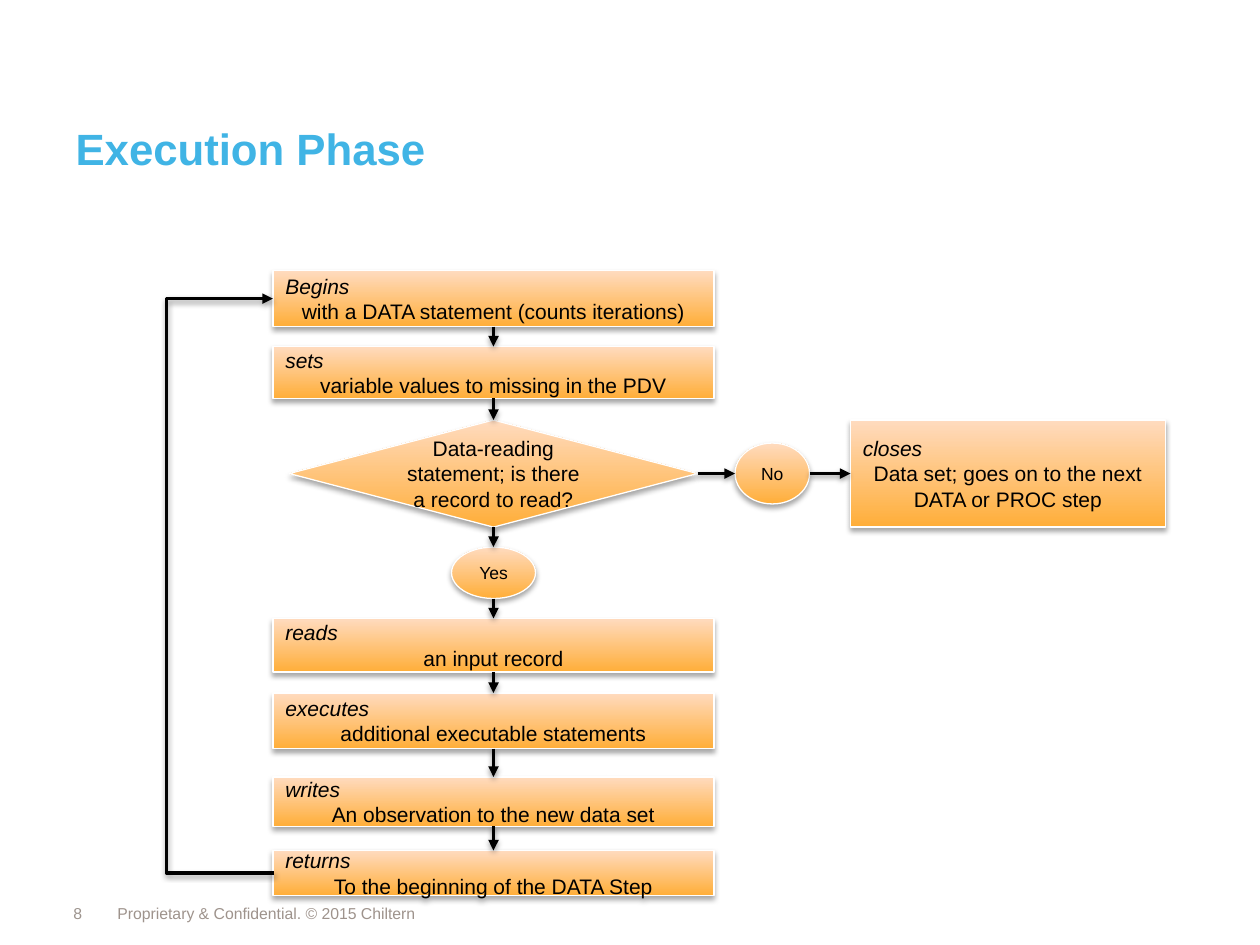
from pptx import Presentation
from pptx.dml.color import RGBColor
from pptx.enum.shapes import MSO_CONNECTOR, MSO_SHAPE
from pptx.enum.text import MSO_ANCHOR, MSO_AUTO_SIZE, PP_ALIGN
from pptx.oxml.ns import qn
from pptx.util import Inches, Pt
from lxml import etree

RECT, DIAMOND, OVAL = MSO_SHAPE.RECTANGLE, MSO_SHAPE.DIAMOND, MSO_SHAPE.OVAL
STRAIGHT, ELBOW = MSO_CONNECTOR.STRAIGHT, MSO_CONNECTOR.ELBOW
LEFT, CENTER, RIGHT = PP_ALIGN.LEFT, PP_ALIGN.CENTER, PP_ALIGN.RIGHT
TOP, MIDDLE = MSO_ANCHOR.TOP, MSO_ANCHOR.MIDDLE
SITE_TOP, SITE_LEFT, SITE_BOTTOM, SITE_RIGHT = range(4)

FONT = "Arial"
COLORS = {"title": "40B4E5", "number": "9D948E", "footer": "9E938C",
          "dark": "FFAE39", "light": "FFDBBF", "edge": "FFFFFF",
          "ink": "000000"}

prs = Presentation()
prs.slide_width, prs.slide_height = Inches(10), Inches(7.5)
CELL = prs.slide_width / 120  # grid of 120 columns by 90 rows

# Flow column: kind, top row in the column, rows high, text
STEPS = [
    (RECT, 0, 5.3, ("Begins", "with a DATA statement (counts iterations)")),
    (RECT, 7.2, 4.95, ("sets", "variable values to missing in the PDV")),
    (DIAMOND, 14.2, 10.2, "Data-reading statement; is there a record to read?"),
    (OVAL, 26.3, 4.9, "Yes"),
    (RECT, 33.1, 5.1, ("reads", "an input record")),
    (RECT, 40.2, 5.3, ("executes", "additional executable statements")),
    (RECT, 48.2, 4.7, ("writes", "An observation to the new data set")),
    (RECT, 55.2, 4.3, ("returns", "To the beginning of the DATA Step")),
]
STEP_WIDTHS = {RECT: 42, DIAMOND: 38.9, OVAL: 8}


def grid(*cells):
    return [round(c * CELL) for c in cells]


def rgb(name):
    return RGBColor.from_string(COLORS[name])


def add_run(p, text, size, color, bold=False, italic=False):
    r = p.add_run()
    r.text = text
    f = r.font
    f.name, f.size, f.bold, f.italic = FONT, Pt(size), bold, italic
    f.color.rgb = rgb(color)


def add_shadow(s, alpha, distance):
    sp_pr = s._element.spPr
    effects = etree.SubElement(sp_pr, qn("a:effectLst"))
    shadow = etree.SubElement(effects, qn("a:outerShdw"), blurRad=str(Pt(3.1)),
                              dist=str(Pt(distance)), dir="5400000",
                              rotWithShape="0")
    color = etree.SubElement(shadow, qn("a:srgbClr"), val=COLORS["ink"])
    etree.SubElement(color, qn("a:alpha"), val=str(alpha * 1000))


def add_node(slide, kind, box, text):
    """A flow shape; a (verb, detail) pair puts the verb on its own line."""
    s = slide.shapes.add_shape(kind, *grid(*box))
    s.fill.gradient()
    s.fill.gradient_angle = 90
    for stop, name in zip(s.fill.gradient_stops, ("dark", "light")):
        stop.color.rgb = rgb(name)
    s.line.color.rgb = rgb("edge")
    s.line.width = Pt(0.75)
    add_shadow(s, 35, 1.8)
    tf = s.text_frame
    tf.word_wrap = kind != OVAL
    tf.vertical_anchor = MIDDLE
    p = tf.paragraphs[0]
    if isinstance(text, tuple):
        verb, text = text
        p.alignment = LEFT
        add_run(p, verb, 12, "ink", italic=True)
        p = tf.add_paragraph()
    p.alignment = CENTER
    add_run(p, text, 10 if kind == OVAL else 12, "ink")
    return s


def style_arrow(c):
    c.line.color.rgb = rgb("ink")
    c.line.width = Pt(2)
    etree.SubElement(c.line._get_or_add_ln(), qn("a:tailEnd"), type="triangle")
    add_shadow(c, 38, 1.6)


def side_point(s, site):
    x = {SITE_LEFT: 0, SITE_RIGHT: s.width}.get(site, s.width // 2)
    y = {SITE_TOP: 0, SITE_BOTTOM: s.height}.get(site, s.height // 2)
    return s.left + x, s.top + y


def link(slide, start, start_site, end, end_site):
    """Arrow between two sides; ovals number their sites differently."""
    c = slide.shapes.add_connector(STRAIGHT, *side_point(start, start_site),
                                   *side_point(end, end_site))
    if start.auto_shape_type != OVAL:
        c.begin_connect(start, start_site)
    if end.auto_shape_type != OVAL:
        c.end_connect(end, end_site)
    style_arrow(c)


def flow_column(slide, box):
    left, top, width, _ = box
    nodes = []
    for kind, row, rows, text in STEPS:
        w = STEP_WIDTHS[kind]
        nodes.append(add_node(
            slide, kind, (left + (width - w) / 2, top + row, w, rows), text))
    for upper, lower in zip(nodes, nodes[1:]):
        link(slide, upper, SITE_BOTTOM, lower, SITE_TOP)
    return nodes


def no_branch(slide, box, decision):
    left, top, width, height = box
    no = add_node(slide, OVAL, (left, top + (height - 5.8) / 2, 7.1, 5.8), "No")
    closes = add_node(slide, RECT, (left + 11, top, width - 11, height),
                      ("closes", "Data set; goes on to the next DATA or PROC step"))
    link(slide, decision, SITE_RIGHT, no, SITE_LEFT)
    link(slide, no, SITE_RIGHT, closes, SITE_LEFT)


def return_loop(slide, first, last, column):
    """Elbow from the last step back to the first, turning at a grid column."""
    overlap = Inches(0.01)
    x1, y1 = side_point(last, SITE_LEFT)
    x1 += overlap
    c = slide.shapes.add_connector(ELBOW, x1, y1, *side_point(first, SITE_LEFT))
    bend = round((x1 - column * CELL) / overlap * 100000)
    guides = c._element.spPr.find(qn("a:prstGeom")).get_or_add_avLst()
    etree.SubElement(guides, qn("a:gd"), name="adj1", fmla=f"val {bend}")
    style_arrow(c)


def title(slide, box, text):
    s = slide.shapes.title
    s.left, s.top, s.width, s.height = grid(*box)
    tf = s.text_frame
    tf.auto_size, tf.vertical_anchor = MSO_AUTO_SIZE.NONE, TOP
    p = tf.paragraphs[0]
    p.alignment = LEFT
    add_run(p, text, 25, "title", bold=True)


def footer(slide, box):
    left, top, width, height = box
    parts = [(0, 5, "8", "number", RIGHT),
             (6, width - 6, "Proprietary & Confidential. © 2015 Chiltern",
              "footer", LEFT)]
    for column, columns, text, color, align in parts:
        s = slide.shapes.add_textbox(*grid(left + column, top, columns, height))
        tf = s.text_frame
        tf.word_wrap, tf.vertical_anchor = True, MIDDLE
        p = tf.paragraphs[0]
        p.alignment = align
        add_run(p, text, 9, color)


def main():
    slide = prs.slides.add_slide(prs.slide_layouts[5])
    title(slide, (6, 11, 97, 13), "Execution Phase")
    footer(slide, (4, 85, 47, 4))
    nodes = flow_column(slide, (26, 25.8, 42, 59.5))
    no_branch(slide, (70, 40, 41, 10.2), nodes[2])
    return_loop(slide, nodes[0], nodes[-1], 15.7)
    prs.save("out.pptx")


if __name__ == "__main__":
    main()
